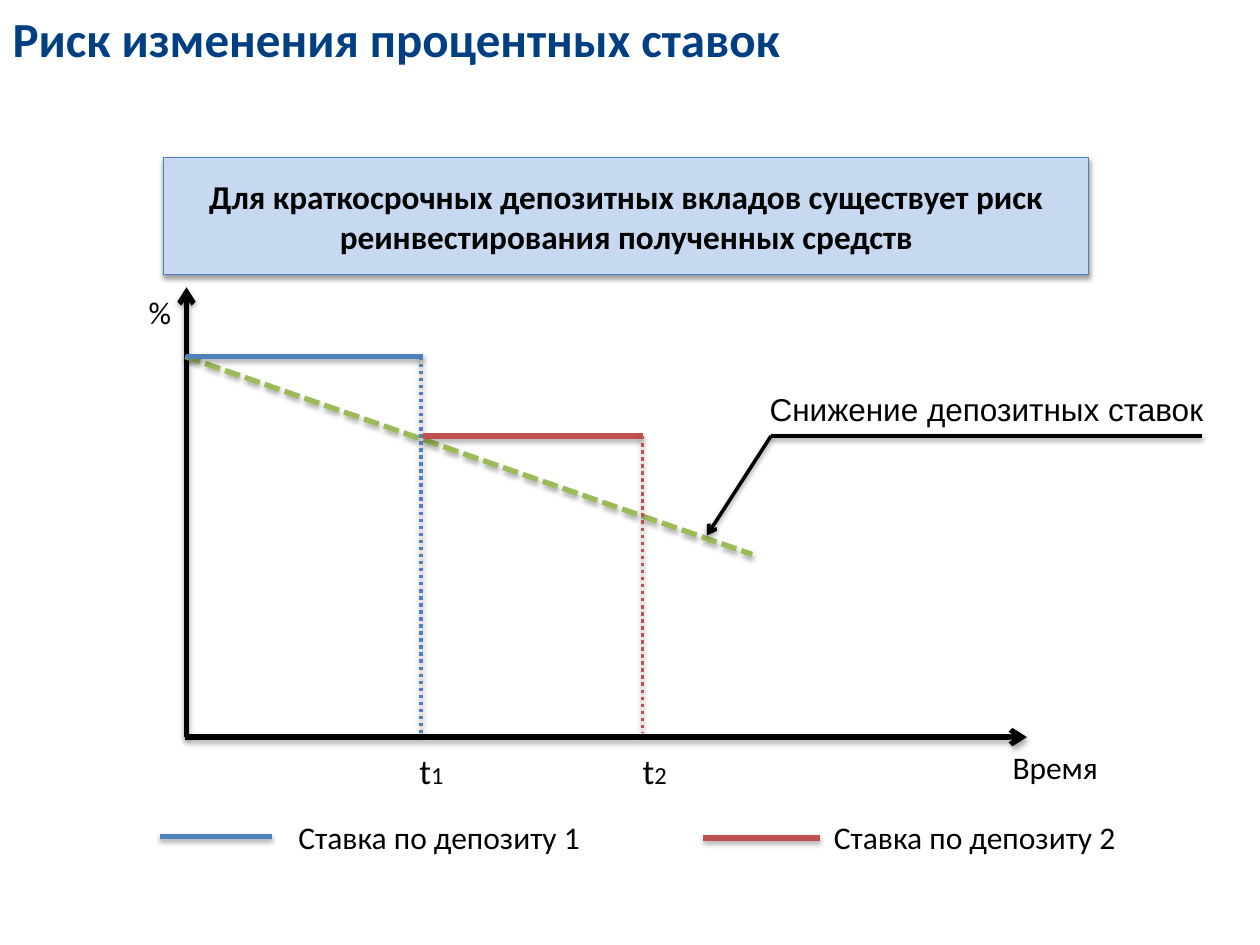
from dataclasses import dataclass

from lxml.etree import SubElement
from pptx import Presentation
from pptx.dml.color import RGBColor
from pptx.enum.dml import MSO_LINE
from pptx.enum.shapes import MSO_CONNECTOR, MSO_SHAPE
from pptx.enum.text import MSO_ANCHOR, MSO_AUTO_SIZE, PP_ALIGN
from pptx.oxml.ns import qn
from pptx.util import Inches, Pt


@dataclass(frozen=True)
class Theme:
    font: str = "Calibri"
    callout_font: str = "Arial"
    title: str = "003F82"
    text: str = "000000"
    box_fill: str = "C6D9F1"
    box_line: str = "4B7EBC"
    deposit1: str = "4F81BD"
    deposit2: str = "C0504D"
    trend: str = "9BBB59"
    title_size: float = 28
    box_size: float = 19
    body_size: float = 18
    tick_size: float = 20
    index_size: float = 14
    thick: float = 3
    thin: float = 2


THEME = Theme()


def format_run(r, size, color=THEME.text, bold=False, font=THEME.font):
    r.font.name = font
    r.font.size = Pt(size)
    r.font.bold = bold
    r.font.color.rgb = RGBColor.from_string(color)


def add_shadow(sp, alpha, distance):
    """Give a shape or connector a soft shadow falling straight down."""
    sp_pr = sp._element.spPr
    effects = sp_pr.find(qn("a:effectLst"))
    if effects is None:
        effects = SubElement(sp_pr, qn("a:effectLst"))
    shadow = SubElement(effects, qn("a:outerShdw"), blurRad=str(Pt(3.1)),
                        dist=str(Pt(distance)), dir="5400000", rotWithShape="0")
    color = SubElement(shadow, qn("a:srgbClr"), val="000000")
    SubElement(color, qn("a:alpha"), val=str(alpha * 1000))


def add_line(shapes, start, end, color, width=THEME.thick, dash=None, arrow=False):
    line = shapes.add_connector(MSO_CONNECTOR.STRAIGHT,
                                *(Inches(v) for v in (*start, *end)))
    line.line.color.rgb = RGBColor.from_string(color)
    line.line.width = Pt(width)
    if dash is not None:
        line.line.dash_style = dash
    if arrow:
        SubElement(line.line._get_or_add_ln(), qn("a:tailEnd"), type="arrow")
    if width == THEME.thick:
        add_shadow(line, 35, 1.8)
    else:
        add_shadow(line, 38, 1.6)


def add_label(shapes, box, *parts, align=PP_ALIGN.LEFT, font=THEME.font):
    """Add a one-line label; each part is a (text, size) pair."""
    tf = shapes.add_textbox(*(Inches(v) for v in box)).text_frame
    tf.word_wrap = False
    tf.auto_size = MSO_AUTO_SIZE.SHAPE_TO_FIT_TEXT
    p = tf.paragraphs[0]
    p.alignment = align
    for text, size in parts:
        r = p.add_run()
        r.text = text
        format_run(r, size, font=font)


def set_title(s, text):
    title = s.shapes.title
    title.left, title.top = Inches(0), Inches(0.02)
    title.width, title.height = Inches(10), Inches(7.48)
    tf = title.text_frame
    tf.text = text
    tf.word_wrap = True
    tf.auto_size = MSO_AUTO_SIZE.NONE
    tf.vertical_anchor = MSO_ANCHOR.TOP
    p = tf.paragraphs[0]
    p.alignment = PP_ALIGN.LEFT
    format_run(p.runs[0], THEME.title_size, THEME.title, bold=True)


def add_statement(s, text):
    sp = s.shapes.add_shape(MSO_SHAPE.RECTANGLE, Inches(1.3), Inches(1.25),
                            Inches(7.34), Inches(0.93))
    sp.fill.solid()
    sp.fill.fore_color.rgb = RGBColor.from_string(THEME.box_fill)
    sp.line.color.rgb = RGBColor.from_string(THEME.box_line)
    sp.line.width = Pt(0.75)
    sp.shadow.inherit = False
    add_shadow(sp, 38, 1.6)
    tf = sp.text_frame
    tf.word_wrap = True
    tf.vertical_anchor = MSO_ANCHOR.MIDDLE
    tf.margin_left = tf.margin_right = Inches(0.12)
    tf.margin_top = tf.margin_bottom = Inches(0.06)
    tf.text = text
    p = tf.paragraphs[0]
    p.alignment = PP_ALIGN.CENTER
    format_run(p.runs[0], THEME.box_size, bold=True)


def add_legend(s):
    shapes = s.shapes.add_group_shape().shapes
    entries = [
        ("Ставка по депозиту 1", 1.27, 2.16, 6.64, 2.27, THEME.deposit1),
        ("Ставка по депозиту 2", 5.58, 6.51, 6.65, 6.52, THEME.deposit2),
    ]
    for text, x1, x2, y, text_x, color in entries:
        add_line(shapes, (x1, y), (x2, y), color)
        add_label(shapes, (text_x, 6.44, 2.52, 0.4), (text, THEME.body_size))


def add_diagram(s):
    shapes = s.shapes.add_group_shape().shapes
    origin_x, axis_y, drop_y = 1.48, 5.85, 5.82

    # Axes and their names
    add_line(shapes, (1.47, axis_y), (8.15, axis_y), THEME.text, arrow=True)
    add_line(shapes, (origin_x, axis_y), (origin_x, 2.28), THEME.text, arrow=True)
    for text, box in [("%", (1.07, 2.28, 0.4, 0.4)),
                      ("Время", (7.93, 5.89, 0.89, 0.4))]:
        add_label(shapes, box, (text, THEME.body_size), align=PP_ALIGN.CENTER)

    # Falling market rate
    add_line(shapes, (1.47, 2.83), (5.97, 4.4), THEME.trend,
             dash=MSO_LINE.SQUARE_DOT)

    # Rate of each deposit, its maturity and the time mark
    deposits = [
        ("1", origin_x, 3.36, 3.34, 2.83, 3.23, THEME.deposit1),
        ("2", 3.36, 5.1, 5.1, 3.46, 5, THEME.deposit2),
    ]
    for index, x1, x2, drop_x, rate_y, mark_x, color in deposits:
        add_line(shapes, (x1, rate_y), (x2, rate_y), color)
        add_line(shapes, (drop_x, rate_y), (drop_x, drop_y), color,
                 THEME.thin, MSO_LINE.ROUND_DOT)
        add_label(shapes, (mark_x, 5.9, 0.39, 0.44), ("t", THEME.tick_size),
                  (index, THEME.index_size), align=PP_ALIGN.CENTER)

    # Callout on the falling rate
    corner = (6.12, 3.46)
    add_label(shapes, (6.01, 3.05, 3.68, 0.4),
              ("Снижение депозитных ставок", THEME.body_size),
              font=THEME.callout_font)
    add_line(shapes, corner, (5.61, 4.25), THEME.text, THEME.thin, arrow=True)
    add_line(shapes, corner, (9.54, 3.46), THEME.text, THEME.thin)


def main():
    prs = Presentation()
    prs.slide_width, prs.slide_height = Inches(10), Inches(7.5)
    s = prs.slides.add_slide(prs.slide_layouts[5])
    set_title(s, "Риск изменения процентных ставок")
    add_statement(s, "Для краткосрочных депозитных вкладов существует риск "
                     "реинвестирования полученных средств")
    add_legend(s)
    add_diagram(s)
    prs.save("out.pptx")


if __name__ == "__main__":
    main()
